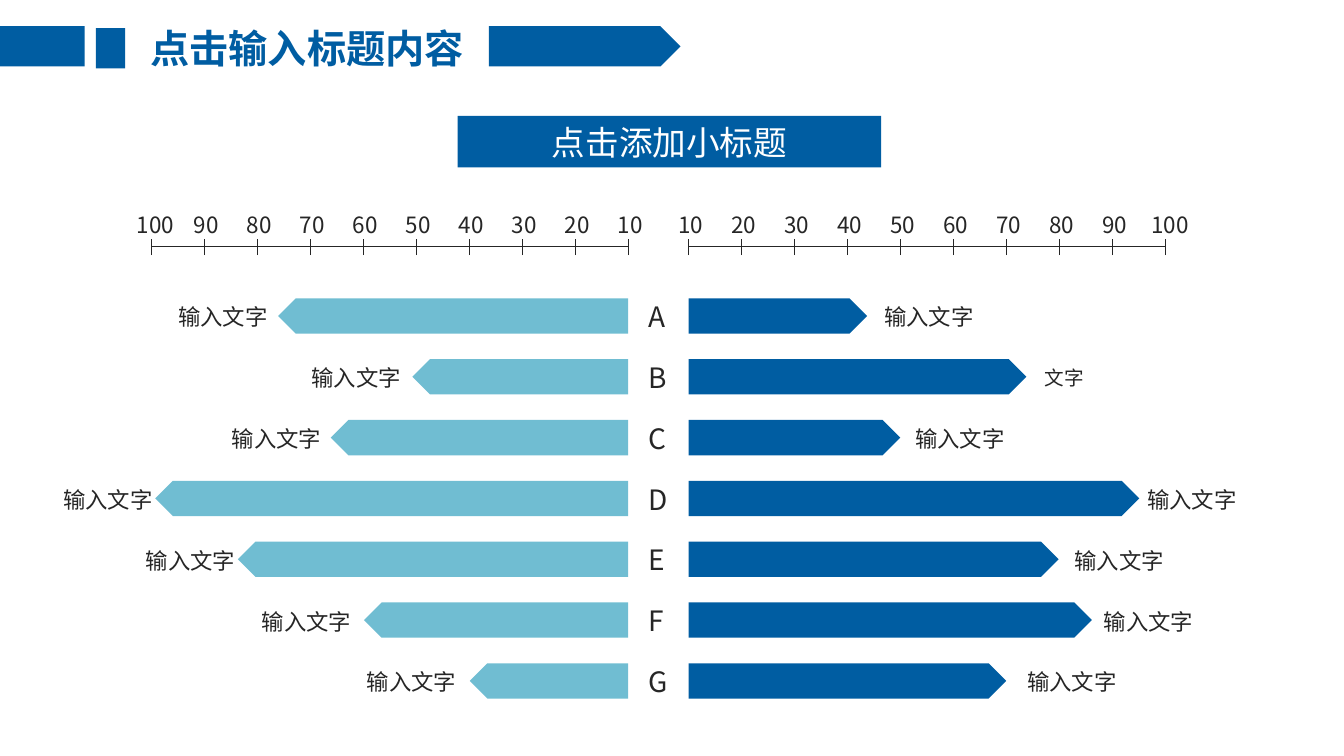
from dataclasses import dataclass

from lxml.etree import SubElement
from pptx import Presentation
from pptx.dml.color import RGBColor
from pptx.enum.shapes import MSO_CONNECTOR as Connector, MSO_SHAPE as Preset
from pptx.enum.text import MSO_ANCHOR as Anchor, MSO_AUTO_SIZE as AutoSize, PP_ALIGN as Align
from pptx.oxml.ns import qn
from pptx.util import Inches, Pt

FONT = "Noto Sans CJK SC"
BLUE, TEAL, INK, WHITE = "005DA2", "70BDD2", "262626", "FFFFFF"

LEFT_ZERO, RIGHT_ZERO = 6.23, 6.83
AXIS_Y, AXIS_LENGTH, TICK_HALF = 2.45, 4.73, 0.08
TICK_STEP = AXIS_LENGTH / 9
FIRST_ROW, ROW_STEP = 2.96, 3.62 / 6
BAR_HEIGHT, LABEL_HEIGHT = 0.35, 0.37


@dataclass(frozen=True)
class Row:
    letter: str
    left_length: float
    left_label: float
    right_length: float
    right_label: float
    right_text: str = "输入文字"
    right_size: int = 16
    right_width: float = 1.1


@dataclass(frozen=True)
class Axis:
    zero: float
    direction: int


ROWS = [
    Row("A", 3.47, 1.67, 1.77, 8.67),
    Row("B", 2.14, 2.99, 3.35, 10.26, "文字", 14, 0.59),
    Row("C", 2.95, 2.2, 2.1, 8.98),
    Row("D", 4.69, 0.53, 4.47, 11.28),
    Row("E", 3.87, 1.35, 3.67, 10.56),
    Row("F", 2.62, 2.5, 4, 10.85),
    Row("G", 1.57, 3.54, 3.15, 10.09),
]
AXES = [Axis(LEFT_ZERO, -1), Axis(RIGHT_ZERO, 1)]


def color(hex_code: str) -> RGBColor:
    return RGBColor.from_string(hex_code)


def write(shape, text: str, *, size: int = 16, fill: str = INK, bold: bool = False,
          align: Align = Align.LEFT, wrap: bool = False) -> None:
    frame = shape.text_frame
    frame.auto_size = AutoSize.NONE
    frame.word_wrap = wrap
    frame.vertical_anchor = Anchor.MIDDLE
    paragraph = frame.paragraphs[0]
    paragraph.alignment = align
    run = paragraph.add_run()
    run.text = text
    run.font.name = FONT
    run.font.size = Pt(size)
    run.font.bold = bold
    run.font.color.rgb = color(fill)
    SubElement(run.font._element, qn("a:ea"), typeface=FONT)


def add_label(slide, x: float, y: float, width: float, height: float, text: str, **style) -> None:
    label = slide.shapes.add_textbox(Inches(x), Inches(y), Inches(width), Inches(height))
    write(label, text, **style)


def add_block(slide, preset: Preset, x: float, y: float, width: float, height: float,
              fill: str, flipped: bool = False):
    block = slide.shapes.add_shape(preset, Inches(x), Inches(y), Inches(width), Inches(height))
    block.shadow.inherit = False
    block.fill.solid()
    block.fill.fore_color.rgb = color(fill)
    block.line.fill.background()
    if flipped:
        block._element.spPr.find(qn("a:xfrm")).set("flipH", "1")
    return block


def add_line(group, x1: float, y1: float, x2: float, y2: float) -> None:
    line = group.shapes.add_connector(
        Connector.STRAIGHT, Inches(x1), Inches(y1), Inches(x2), Inches(y2))
    line.line.color.rgb = color(INK)
    line.line.width = Pt(0.75)
    SubElement(line._element.spPr, qn("a:effectLst"))


def add_axis(slide, axis: Axis) -> None:
    scale = slide.shapes.add_group_shape()
    add_line(scale, axis.zero, AXIS_Y, axis.zero + axis.direction * AXIS_LENGTH, AXIS_Y)
    for step in range(10):
        x = axis.zero + axis.direction * step * TICK_STEP
        add_line(scale, x, AXIS_Y + TICK_HALF, x, AXIS_Y - TICK_HALF)
        value = (step + 1) * 10
        offset, width = (0.24, 0.6) if value == 100 else (0.2, 0.46)
        add_label(slide, x - offset, 2.04, width, LABEL_HEIGHT, str(value))


def add_row(slide, row: Row, y: float) -> None:
    add_block(slide, Preset.PENTAGON, LEFT_ZERO - row.left_length, y,
              row.left_length, BAR_HEIGHT, TEAL, flipped=True)
    add_block(slide, Preset.PENTAGON, RIGHT_ZERO, y, row.right_length, BAR_HEIGHT, BLUE)
    add_label(slide, row.left_label, y, 1.1, LABEL_HEIGHT, "输入文字")
    add_label(slide, row.right_label, y, row.right_width, LABEL_HEIGHT,
              row.right_text, size=row.right_size)
    add_label(slide, 6.33, y - 0.04, 0.4, 0.44, row.letter, size=20)


def add_heading(slide) -> None:
    title = slide.shapes.title
    title.left, title.top = Inches(1.25), Inches(0.19)
    title.width, title.height = Inches(3.59), Inches(0.57)
    write(title, "点击输入标题内容", size=28, fill=BLUE, bold=True, align=Align.CENTER, wrap=True)
    add_block(slide, Preset.PENTAGON, 4.85, 0.26, 1.9, 0.4, BLUE)
    add_block(slide, Preset.RECTANGLE, 0, 0.26, 0.84, 0.4, BLUE)
    add_block(slide, Preset.RECTANGLE, 0.95, 0.28, 0.29, 0.4, BLUE)
    subtitle = add_block(slide, Preset.RECTANGLE, 4.54, 1.15, 4.2, 0.51, BLUE)
    write(subtitle, "点击添加小标题", size=24, fill=WHITE, align=Align.CENTER, wrap=True)


def main() -> None:
    deck = Presentation()
    deck.slide_width, deck.slide_height = Inches(13.33), Inches(7.5)
    slide = deck.slides.add_slide(deck.slide_layouts[5])
    add_heading(slide)
    for axis in AXES:
        add_axis(slide, axis)
    for index, row in enumerate(ROWS):
        add_row(slide, row, FIRST_ROW + index * ROW_STEP)
    deck.save("out.pptx")


if __name__ == "__main__":
    main()
